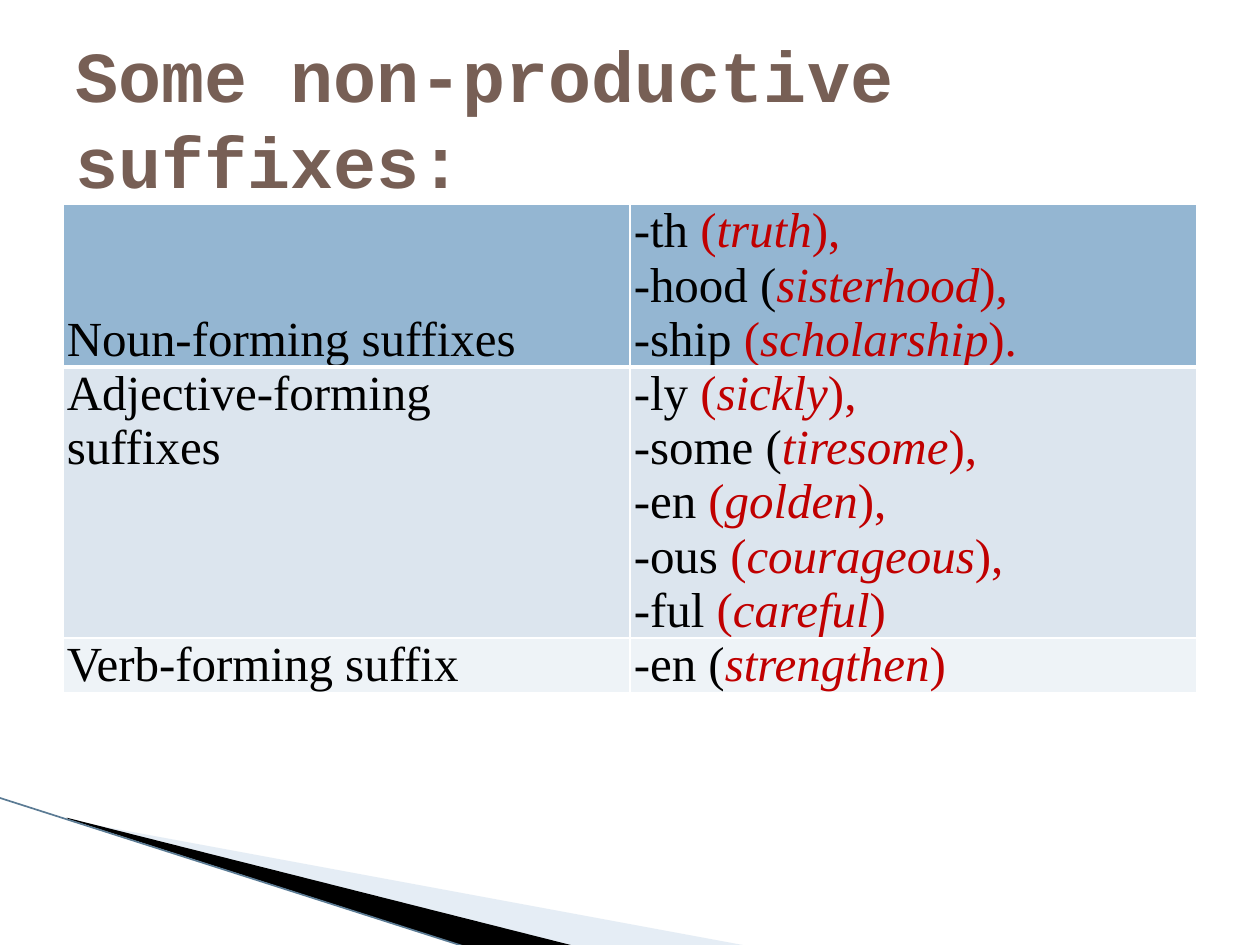
from lxml import etree
from pptx import Presentation
from pptx.dml.color import RGBColor
from pptx.enum.shapes import MSO_CONNECTOR
from pptx.enum.text import MSO_ANCHOR
from pptx.oxml.ns import qn
from pptx.util import Inches, Pt

STRAIGHT = MSO_CONNECTOR.STRAIGHT
TOP, MIDDLE, BOTTOM = MSO_ANCHOR.TOP, MSO_ANCHOR.MIDDLE, MSO_ANCHOR.BOTTOM
COLORS = {
    "title": "775F55", "text": "000000", "example": "C00000",
    "header": "94B6D2", "band": "DCE5EE", "light": "EEF3F7",
    "border": "FFFFFF", "pale": "C0D3E6", "black": "000000", "edge": "5B7B94",
}


def add_span(para, text, size, font, color, bold=False, italic=False):
    span = para.add_run()
    span.text = text
    span.font.size = Pt(size)
    span.font.name = font
    span.font.bold = bold
    span.font.italic = italic
    span.font.color.rgb = RGBColor.from_string(COLORS[color])


def add_border(cell, side, width):
    line = etree.SubElement(cell._tc.tcPr, qn(f"a:{side}"), w=str(Pt(width)))
    fill = etree.SubElement(line, qn("a:solidFill"))
    etree.SubElement(fill, qn("a:srgbClr"), val=COLORS["border"])


deck = Presentation()
deck.slide_width = Inches(10)
deck.slide_height = Inches(7.5)
page = deck.slides.add_slide(deck.slide_layouts[6])

wedges = [
    ("pale", 40, (0.78, 5.47, 4.16, 1.58),
     [(0.55, 6.51), (5.95, 7.51), (4.56, 7.51), (0.55, 6.5)]),
    ("black", 100, (-0.06, 6.33, 4.16, 0.92),
     [(0.53, 6.49), (4.57, 7.51), (3.72, 7.52), (0.54, 6.5)]),
]
for color, opacity, frame, points in wedges:
    corners = [(Inches(x), Inches(y)) for x, y in points]
    builder = page.shapes.build_freeform(*corners[0])
    builder.add_line_segments(corners[1:], close=True)
    wedge = builder.convert_to_shape()
    wedge.left, wedge.top, wedge.width, wedge.height = map(Inches, frame)
    outline = next(wedge._element.iter(qn("a:path")))
    outline.set("w", str(wedge.width))
    outline.set("h", str(wedge.height))
    for point, (x, y) in zip(outline.iter(qn("a:pt")), corners):
        point.set("x", str(x - wedge.left))
        point.set("y", str(y - wedge.top))
    wedge.shadow.inherit = False
    wedge.line.fill.background()
    wedge.fill.solid()
    wedge.fill.fore_color.rgb = RGBColor.from_string(COLORS[color])
    if opacity < 100:
        tint = wedge._element.spPr.find(qn("a:solidFill"))[0]
        etree.SubElement(tint, qn("a:alpha"), val=str(opacity * 1000))

edge = page.shapes.add_connector(
    STRAIGHT, Inches(-0.01), Inches(6.33), Inches(3.71), Inches(7.52))
edge.line.color.rgb = RGBColor.from_string(COLORS["edge"])
edge.line.width = Pt(0.95)
etree.SubElement(edge._element.spPr, qn("a:effectLst"))

rows = [
    ("header", BOTTOM, ["Noun-forming suffixes"],
     [("-th ", "(", "truth", "),"), ("-hood (", "", "sisterhood", "),"),
      ("-ship ", "(", "scholarship", ").")]),
    ("band", TOP, ["Adjective-forming", "suffixes"],
     [("-ly ", "(", "sickly", "),"), ("-some (", "", "tiresome", "),"),
      ("-en ", "(", "golden", "),"), ("-ous ", "(", "courageous", "),"),
      ("-ful ", "(", "careful", ")")]),
    ("light", TOP, ["Verb-forming suffix"], [("-en (", "", "strengthen", ")")]),
]
line_height = 0.43
table = page.shapes.add_table(
    len(rows), 2, Inches(0.5), Inches(1.62), Inches(9), Inches(3.87)).table

for row, (color, anchor, labels, suffixes) in enumerate(rows):
    table.rows[row].height = Inches(line_height * len(suffixes))
    for column, lines in enumerate([[(label,) for label in labels], suffixes]):
        cell = table.cell(row, column)
        cell.margin_left = cell.margin_right = Inches(0.03)
        cell.margin_top = cell.margin_bottom = 0
        cell.vertical_anchor = anchor
        for index, parts in enumerate(lines):
            body = cell.text_frame
            para = body.paragraphs[0] if index == 0 else body.add_paragraph()
            for place, part in enumerate(parts):
                if part:
                    add_span(para, part, 28, "Times New Roman",
                             "example" if place else "text", italic=place == 2)
        for side in ("lnL", "lnR", "lnT", "lnB"):
            thick = (row, side) in ((0, "lnB"), (1, "lnT"))
            add_border(cell, side, 3 if thick else 1)
        cell.fill.solid()
        cell.fill.fore_color.rgb = RGBColor.from_string(COLORS[color])

title = page.shapes.add_textbox(Inches(0.5), Inches(0.3), Inches(9), Inches(1.25))
title.text_frame.word_wrap = True
title.text_frame.vertical_anchor = MIDDLE
add_span(title.text_frame.paragraphs[0], "Some non-productive suffixes:",
         41, "Courier New", "title", bold=True)

deck.save("out.pptx")
